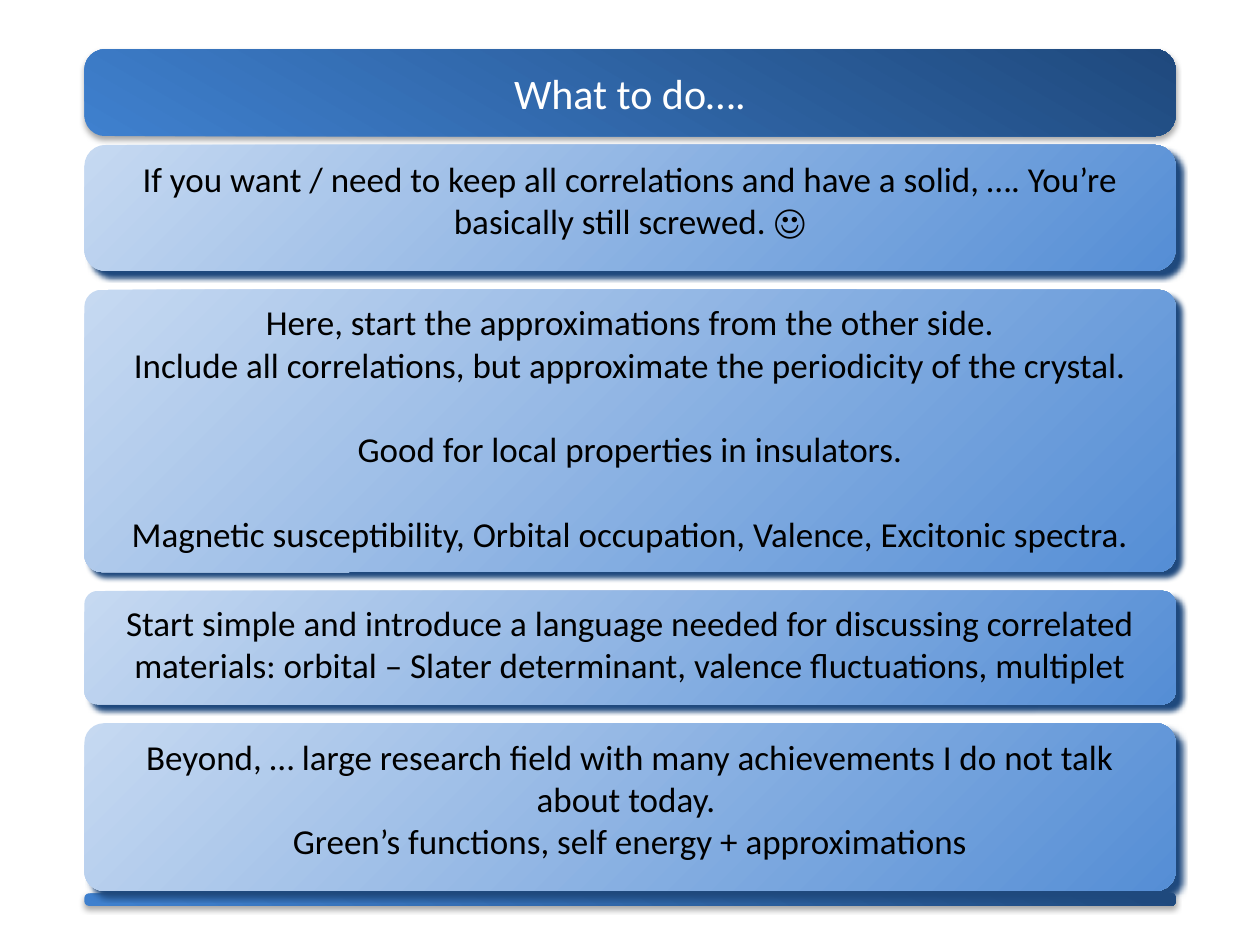
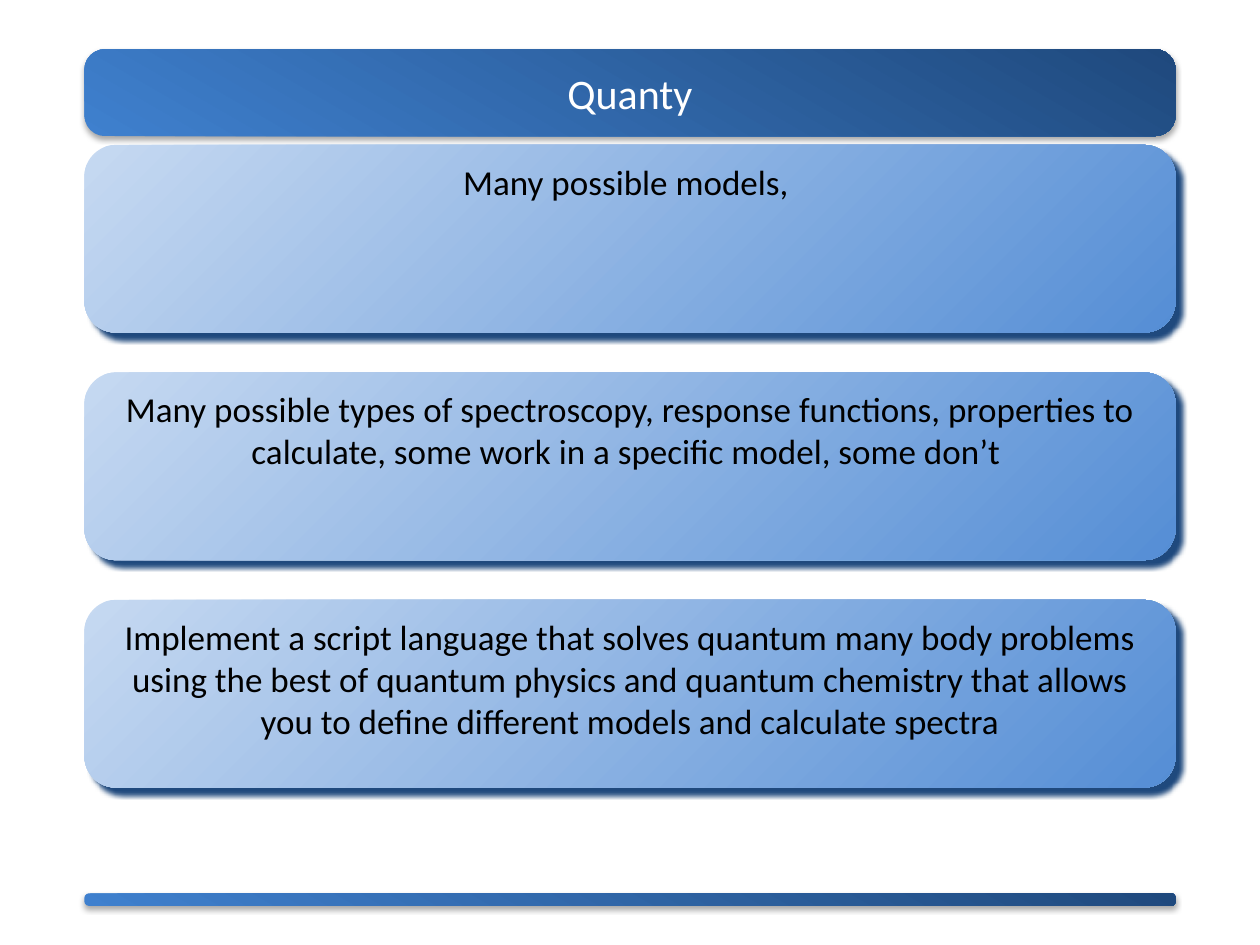
"""Build two slides of shaded panels under a shared title banner."""
from dataclasses import dataclass
from typing import NamedTuple

from lxml import etree
from pptx import Presentation
from pptx.dml.color import RGBColor
from pptx.enum.shapes import MSO_SHAPE
from pptx.enum.text import MSO_ANCHOR, MSO_AUTO_SIZE, PP_ALIGN
from pptx.oxml.ns import qn
from pptx.util import Pt

ROUNDED = MSO_SHAPE.ROUNDED_RECTANGLE
TOP, MIDDLE = MSO_ANCHOR.TOP, MSO_ANCHOR.MIDDLE
NO_FIT = MSO_AUTO_SIZE.NONE
CENTER = PP_ALIGN.CENTER

WHITE = RGBColor(0xFF, 0xFF, 0xFF)
BLACK = RGBColor(0x00, 0x00, 0x00)
NAVY = RGBColor(0x1F, 0x49, 0x7D)
BLUE = RGBColor(0x3F, 0x80, 0xCE)
PALE_BLUE = RGBColor(0xC6, 0xD9, 0xF1)
SKY_BLUE = RGBColor(0x55, 0x8E, 0xD5)

LEFT, WIDTH = Pt(48.2), Pt(623.6)
BANNER_TOP, BANNER_HEIGHT = Pt(28.1), Pt(49.7)
FOOTER_TOP, FOOTER_HEIGHT = Pt(510.5), Pt(7.2)
PANELS_TOP = Pt(82.8)
BLANK_LINE = Pt(24.4)

TITLE_FONT = {"name": "Calibri", "size": Pt(24), "color": WHITE}
PANEL_FONT = {"name": "Calibri", "size": Pt(20), "color": BLACK}
TITLE_FRAME = {"word_wrap": True, "auto_size": NO_FIT, "vertical_anchor": MIDDLE}
PANEL_FRAME = {"word_wrap": True, "auto_size": NO_FIT, "vertical_anchor": TOP}


class Look(NamedTuple):
    """Gradient and shadow of a rounded box."""
    start: RGBColor
    end: RGBColor
    angle: int
    shadow: RGBColor
    opacity: int
    distance: int
    direction: int


BAR_LOOK = Look(BLUE, NAVY, 60, BLACK, 35, Pt(1.8), 90)
PANEL_LOOK = Look(PALE_BLUE, SKY_BLUE, 315, NAVY, 100, Pt(5), 45)
SHADOW_BLUR = Pt(3.15)


class Line(NamedTuple):
    """One paragraph and the space above it."""
    text: str
    space_before: int = 0


@dataclass
class Panel:
    """A shaded box holding centred paragraphs."""
    height: int
    rounding: float
    lines: list[Line]


@dataclass
class Topic:
    """A slide: its title and a stack of panels."""
    title: str
    gap: int
    panels: list[Panel]


TOPICS = [
    Topic("What to do….", Pt(10.8), [
        Panel(Pt(72), 0.169, [
            Line("If you want / need to keep all correlations and have a solid, …. "
                 "You’re basically still screwed. ☺")]),
        Panel(Pt(161.3), 0.061, [
            Line("Here, start the approximations from the other side."),
            Line("Include all correlations, but approximate the periodicity of the crystal."),
            Line("Good for local properties in insulators.", BLANK_LINE),
            Line("Magnetic susceptibility, Orbital occupation, Valence, Excitonic spectra.",
                 BLANK_LINE)]),
        Panel(Pt(64.8), 0.117, [
            Line("Start simple and introduce a language needed for discussing correlated "
                 "materials: orbital – Slater determinant, valence fluctuations, multiplet")]),
        Panel(Pt(95.8), 0.117, [
            Line("Beyond, … large research field with many achievements I do not talk "
                 "about today. "),
            Line("Green’s functions, self energy + approximations")]),
    ]),
    Topic("Quanty", Pt(22.7), [
        Panel(Pt(107.3), 0.169, [Line(text)]) for text in (
            "Many possible models, ",
            "Many possible types of spectroscopy, response functions, properties to "
            "calculate, some work in a specific model, some don’t ",
            "Implement a script language that solves quantum many body problems using "
            "the best of quantum physics and quantum chemistry that allows you to define "
            "different models and calculate spectra")
    ]),
]


def set_values(target, values: dict) -> None:
    """Set each named attribute of the target."""
    for name, value in values.items():
        setattr(target, name, value)


def set_font(font, values: dict) -> None:
    """Apply font values, including the colour."""
    set_values(font, {name: value for name, value in values.items() if name != "color"})
    font.color.rgb = values["color"]


def add_shadow(box, look: Look) -> None:
    """Give the box an outer shadow."""
    box.shadow.inherit = False
    effects = box._element.spPr.find(qn("a:effectLst"))
    shadow = etree.SubElement(effects, qn("a:outerShdw"), {
        "blurRad": str(int(SHADOW_BLUR)), "dist": str(int(look.distance)),
        "dir": str(look.direction * 60000), "rotWithShape": "0"})
    color = etree.SubElement(shadow, qn("a:srgbClr"), val=str(look.shadow))
    etree.SubElement(color, qn("a:alpha"), val=str(look.opacity * 1000))


def add_rounded_box(page, top: int, height: int, rounding: float, look: Look):
    """Draw a full-width rounded box with gradient and shadow."""
    box = page.shapes.add_shape(ROUNDED, LEFT, top, WIDTH, height)
    box.adjustments[0] = rounding
    box.fill.gradient()
    box.fill.gradient_angle = look.angle
    for stop, color in zip(box.fill.gradient_stops, (look.start, look.end)):
        stop.color.rgb = color
    box.line.fill.background()
    add_shadow(box, look)
    return box


def add_layout_bars(page, layout) -> None:
    """Place the title banner and footer bar behind the layout's placeholders."""
    bars = [add_rounded_box(page, BANNER_TOP, BANNER_HEIGHT, 0.238, BAR_LOOK),
            add_rounded_box(page, FOOTER_TOP, FOOTER_HEIGHT, 0.377, BAR_LOOK)]
    for offset, bar in enumerate(bars):
        bar._element.nvSpPr.cNvPr.set("id", str(101 + offset))
        layout.shapes._spTree.insert(2 + offset, bar._element)


def write_title(page, text: str) -> None:
    """Fill and format the title placeholder."""
    frame = page.shapes.title.text_frame
    frame.text = text
    set_values(frame, TITLE_FRAME)
    para = frame.paragraphs[0]
    para.alignment = CENTER
    set_font(para.font, TITLE_FONT)


def add_panel(page, panel: Panel, top: int) -> None:
    """Draw one panel with its paragraphs."""
    frame = add_rounded_box(page, top, panel.height, panel.rounding, PANEL_LOOK).text_frame
    set_values(frame, PANEL_FRAME)
    for index, line in enumerate(panel.lines):
        para = frame.add_paragraph() if index else frame.paragraphs[0]
        para.text = line.text
        set_values(para, {"alignment": CENTER, "space_before": line.space_before})
        set_font(para.font, PANEL_FONT)


def add_topic(page, topic: Topic) -> None:
    """Write the title and stack the panels below it."""
    write_title(page, topic.title)
    top = PANELS_TOP
    for panel in topic.panels:
        add_panel(page, panel, top)
        top += panel.height + topic.gap


def main() -> None:
    """Build and save the deck."""
    deck = Presentation()
    set_values(deck, {"slide_width": Pt(720), "slide_height": Pt(540)})
    layout = deck.slide_layouts[5]
    set_values(layout.placeholders[0], {
        "left": LEFT, "top": BANNER_TOP, "width": WIDTH, "height": BANNER_HEIGHT})
    pages = [deck.slides.add_slide(layout) for _ in TOPICS]
    add_layout_bars(pages[0], layout)
    for page, topic in zip(pages, TOPICS):
        add_topic(page, topic)
    deck.save("out.pptx")


if __name__ == "__main__":
    main()
